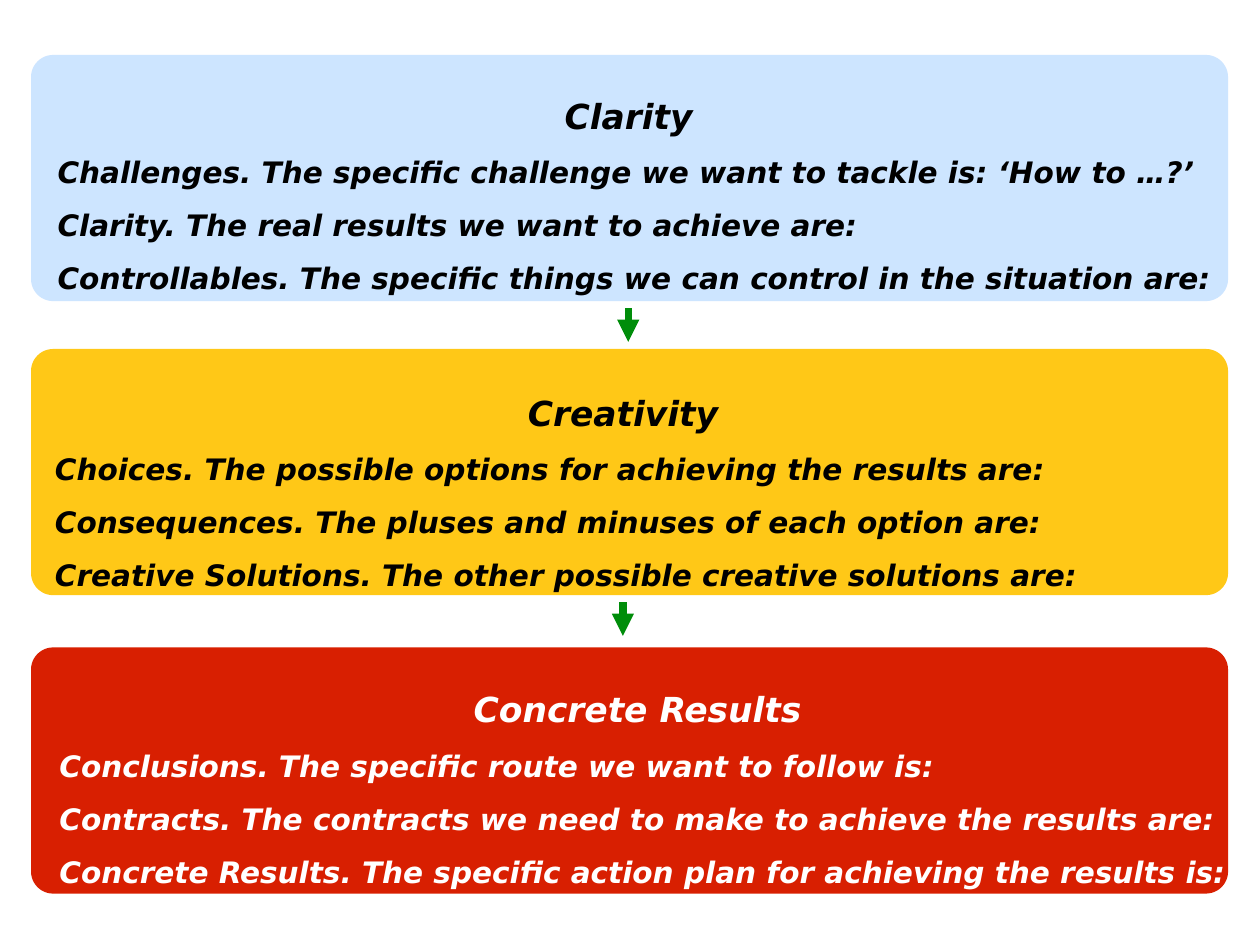
from pptx import Presentation
from pptx.dml.color import RGBColor
from pptx.enum.shapes import MSO_CONNECTOR as CONN, MSO_SHAPE as SHAPE
from pptx.enum.text import MSO_ANCHOR as ANCHOR, MSO_AUTO_SIZE as FIT, PP_ALIGN as ALIGN
from pptx.oxml.ns import qn
from pptx.util import Inches, Pt
from lxml.etree import SubElement

W, H = 14.22, 10.67
FONT = "DejaVu Sans"
COLORS = {
    "sky": "CDE5FF",
    "gold": "FFC817",
    "red": "D81F01",
    "green": "008D0A",
    "black": "000000",
    "white": "FFFFFF",
}
PANEL_LEFT, PANEL_W, PANEL_H = 0.35, 13.51, 2.78
TEXT_H = 2.4
INSET = 0.04
MARGIN, HANGING = 0.7, -0.57
ARROW_GAP, ARROW_LEN = 0.08, 0.38

PANELS = [
    dict(top=0.62, fill="sky", color="black", pad=(0.13, 0.18), text_w=13.23,
         title="Clarity",
         lines=["Challenges. The specific challenge we want to tackle is: ‘How to …?’",
                "Clarity. The real results we want to achieve are:",
                "Controllables. The specific things we can control in the situation are:"]),
    dict(top=3.94, fill="gold", color="black", pad=(0.1, 0.21), text_w=13.16,
         title="Creativity",
         lines=["Choices. The possible options for achieving the results are:",
                "Consequences. The pluses and minuses of each option are:",
                "Creative Solutions. The other possible creative solutions are:"]),
    dict(top=7.31, fill="red", color="white", pad=(0.15, 0.19), text_w=13.39,
         title="Concrete Results",
         lines=["Conclusions. The specific route we want to follow is:",
                "Contracts. The contracts we need to make to achieve the results are:",
                "Concrete Results. The specific action plan for achieving the results is:"]),
]
ARROW_XS = [7.09, 7.03]


def rgb(name):
    return RGBColor.from_string(COLORS[name])


def write(p, text, size=24, color="black", align=ALIGN.LEFT, hanging=False):
    p.alignment = align
    p.line_spacing = 1.5
    if hanging:
        pPr = p._p.get_or_add_pPr()
        pPr.set("marL", str(Inches(MARGIN)))
        pPr.set("indent", str(Inches(HANGING)))
    r = p.add_run()
    r.text = text
    r.font.name = FONT
    r.font.size = Pt(size)
    r.font.bold = r.font.italic = True
    r.font.color.rgb = rgb(color)


def add_panel(s, left, top, width, height, fill, color, pad, text_w, title, lines):
    sp = s.shapes.add_shape(SHAPE.ROUNDED_RECTANGLE, Inches(left), Inches(top),
                            Inches(width), Inches(height))
    sp.adjustments[0] = 0.09
    sp.shadow.inherit = False
    sp.fill.solid()
    sp.fill.fore_color.rgb = rgb(fill)
    sp.line.fill.background()

    dx, dy = pad
    tb = s.shapes.add_textbox(Inches(left + dx), Inches(top + dy),
                              Inches(text_w), Inches(TEXT_H))
    tf = tb.text_frame
    tf.word_wrap = True
    tf.auto_size = FIT.SHAPE_TO_FIT_TEXT
    tf.vertical_anchor = ANCHOR.TOP
    tf.margin_left = tf.margin_right = tf.margin_top = tf.margin_bottom = Inches(INSET)
    write(tf.paragraphs[0], title, size=28, color=color, align=ALIGN.CENTER)
    for line in lines:
        write(tf.add_paragraph(), line, color=color, hanging=True)


def add_arrow(s, x, top, length):
    c = s.shapes.add_connector(CONN.STRAIGHT, Inches(x), Inches(top),
                               Inches(x), Inches(top + length))
    c.line.color.rgb = rgb("green")
    c.line.width = Pt(6)
    SubElement(c.line._get_or_add_ln(), qn("a:tailEnd"), type="triangle")
    SubElement(c._element.spPr, qn("a:effectLst"))


def main():
    prs = Presentation()
    prs.slide_width, prs.slide_height = Inches(W), Inches(H)
    s = prs.slides.add_slide(prs.slide_layouts[6])
    for panel in PANELS:
        add_panel(s, left=PANEL_LEFT, width=PANEL_W, height=PANEL_H, **panel)
    for x, panel in zip(ARROW_XS, PANELS):
        add_arrow(s, x, panel["top"] + PANEL_H + ARROW_GAP, ARROW_LEN)
    prs.save("out.pptx")


if __name__ == "__main__":
    main()
